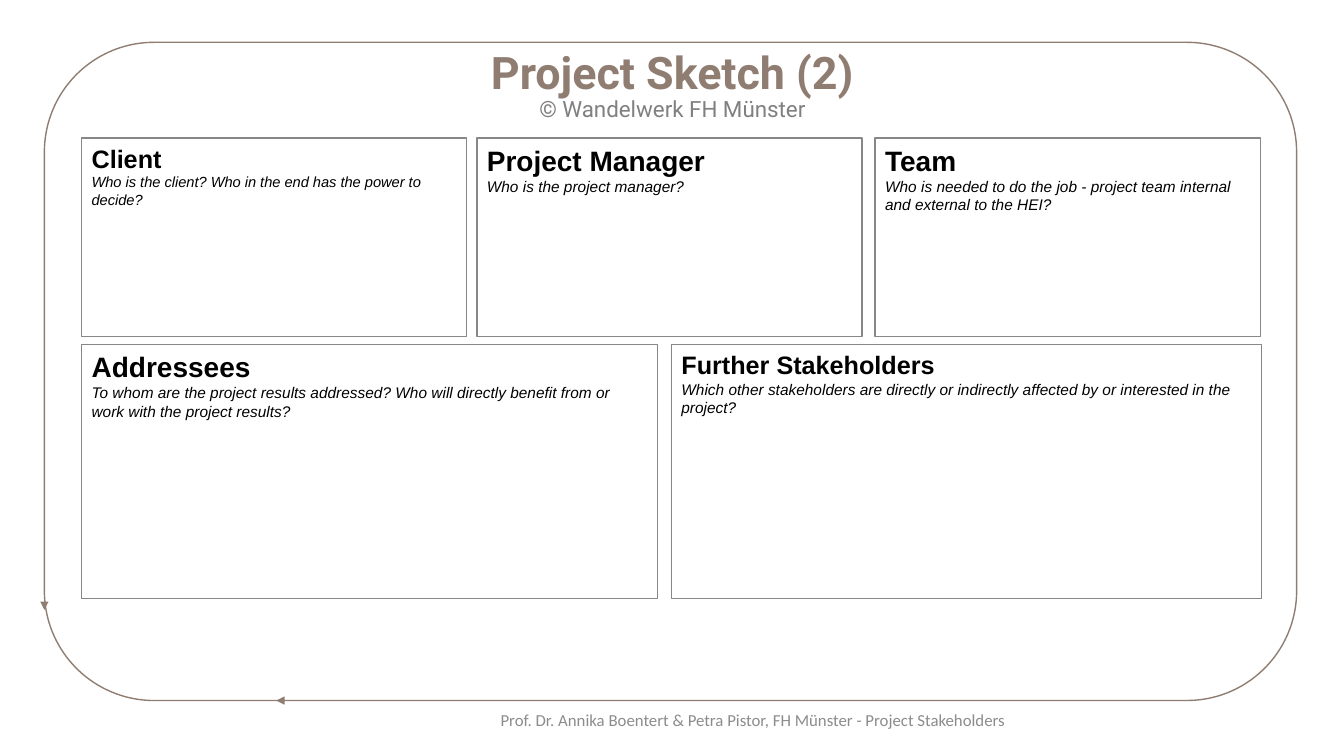
from lxml.etree import SubElement as SubEl
from pptx import Presentation
from pptx.dml.color import RGBColor as RGB
from pptx.enum.shapes import MSO_CONNECTOR as CONN, MSO_SHAPE as SHAPE
from pptx.enum.text import MSO_ANCHOR as ANCHOR, MSO_AUTO_SIZE as FIT, PP_ALIGN as ALIGN
from pptx.oxml.ns import qn
from pptx.util import Pt

PX = 9144  # 100 px to the inch
BROWN = RGB(0x90, 0x7D, 0x71)
GREY = RGB(0x80, 0x80, 0x80)
FOOT = RGB(0x8C, 0x8C, 0x8C)
EDGE = RGB(0x87, 0x87, 0x87)
BLACK = RGB(0, 0, 0)
WHITE = RGB(0xFF, 0xFF, 0xFF)

LEFT = 81
TOP_ROW = (137, 197)
LOW_ROW = (342, 252)
# left, width, row, heading, heading size, question, question size
CARDS = [
    (LEFT, 382, TOP_ROW, "Client", 18,
     "Who is the client? Who in the end has the power to decide?", 10.5),
    (473, 382, TOP_ROW, "Project Manager", 20, "Who is the project manager?", 11),
    (868, 382, TOP_ROW, "Team", 20,
     "Who is needed to do the job - project team internal and external to the HEI?", 11),
    (LEFT, 571, LOW_ROW, "Addressees", 20,
     "To whom are the project results addressed? "
     "Who will directly benefit from or work with the project results?", 11),
    (666, 585, LOW_ROW, "Further Stakeholders", 18,
     "Which other stakeholders are directly or indirectly affected by "
     "or interested in the project?", 11),
]


def emu(*px):
    return [n * PX for n in px]


def style(item, **form):
    for key, val in form.items():
        setattr(item, key, val)


def write(para, text, size, color, name, **form):
    run = para.add_run()
    run.text = text
    style(run.font, size=Pt(size), name=name, **form)
    run.font.color.rgb = color


def add_box(slide, kind, area, color):
    box = slide.shapes.add_shape(kind, *emu(*area))
    box.shadow.inherit = False
    box.fill.background()
    box.line.color.rgb = color
    box.line.width = Pt(1)
    return box


def add_arrow(slide, *ends):
    arrow = slide.shapes.add_connector(CONN.STRAIGHT, *emu(*ends))
    arrow.line.color.rgb = BROWN
    arrow.line.width = Pt(1)
    SubEl(arrow.line._get_or_add_ln(), qn("a:tailEnd"), type="triangle")
    SubEl(arrow._element.spPr, qn("a:effectLst"))


def set_line(shape, text, size, color, name, anchor, space=1.0, **form):
    """Fill a shape with one centred line of text."""
    frame = shape.text_frame
    style(frame, word_wrap=True, auto_size=FIT.NONE, vertical_anchor=anchor)
    para = frame.paragraphs[0]
    style(para, alignment=ALIGN.CENTER, line_spacing=space)
    write(para, text, size, color, name, **form)


def add_label(slide, area, *args, **form):
    set_line(slide.shapes.add_textbox(*emu(*area)), *args, **form)


def add_card(slide, left, width, row, head, head_size, ask, ask_size):
    top, height = row
    card = add_box(slide, SHAPE.RECTANGLE, (left, top, width, height), EDGE)
    card.fill.solid()
    card.fill.fore_color.rgb = WHITE
    frame = card.text_frame
    style(frame, word_wrap=True, vertical_anchor=ANCHOR.TOP)
    first, second = frame.paragraphs[0], frame.add_paragraph()
    style(first, alignment=ALIGN.LEFT)
    style(second, alignment=ALIGN.LEFT)
    write(first, head, head_size, BLACK, "Arial", bold=True)
    write(second, ask, ask_size, BLACK, "Arial", italic=True)


def add_title(slide):
    title = slide.shapes.title
    left, top, width, height = emu(149, 41, 1036, 67)
    style(title, left=left, top=top, width=width, height=height)
    set_line(title, "Project Sketch (2)", 32, BROWN, "Roboto",
             ANCHOR.MIDDLE, space=0.9, bold=True)


def main():
    deck = Presentation()
    deck.slide_width, deck.slide_height = emu(1333, 750)
    slide = deck.slides.add_slide(deck.slide_layouts[5])
    add_box(slide, SHAPE.ROUNDED_RECTANGLE, (44, 42, 1242, 653), BROWN)
    add_arrow(slide, 323, 695, 274, 695)
    add_arrow(slide, 44, 547, 44, 605)
    add_title(slide)
    add_label(slide, (149, 92, 1036, 61), "© Wandelwerk FH Münster",
              16, GREY, "Roboto", ANCHOR.TOP, space=0.9)
    for card in CARDS:
        add_card(slide, *card)
    add_label(slide, (283, 695, 928, 39),
              "Prof. Dr. Annika Boentert & Petra Pistor, FH Münster - Project Stakeholders",
              12, FOOT, "Calibri", ANCHOR.MIDDLE)
    deck.save("out.pptx")


if __name__ == "__main__":
    main()
